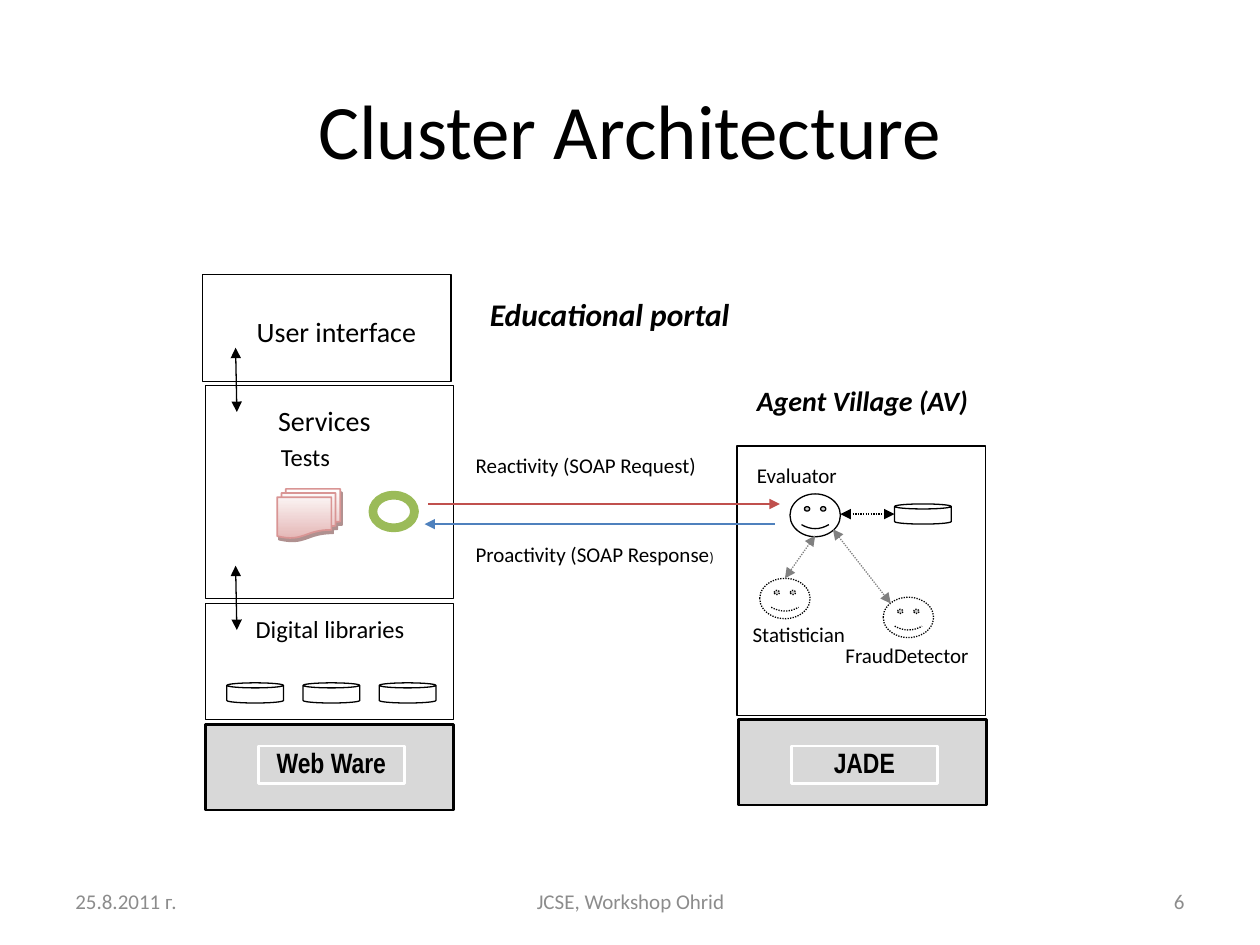
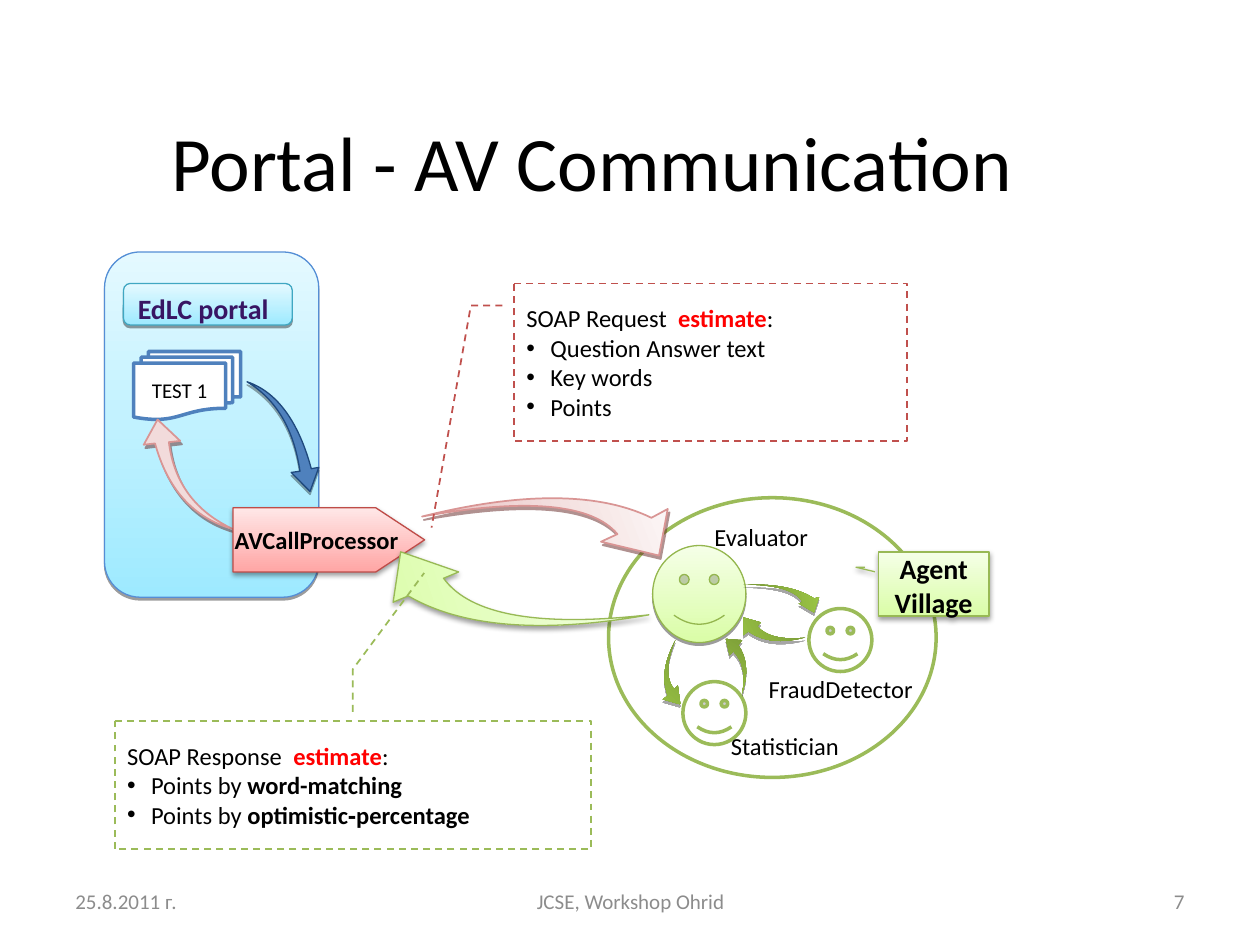
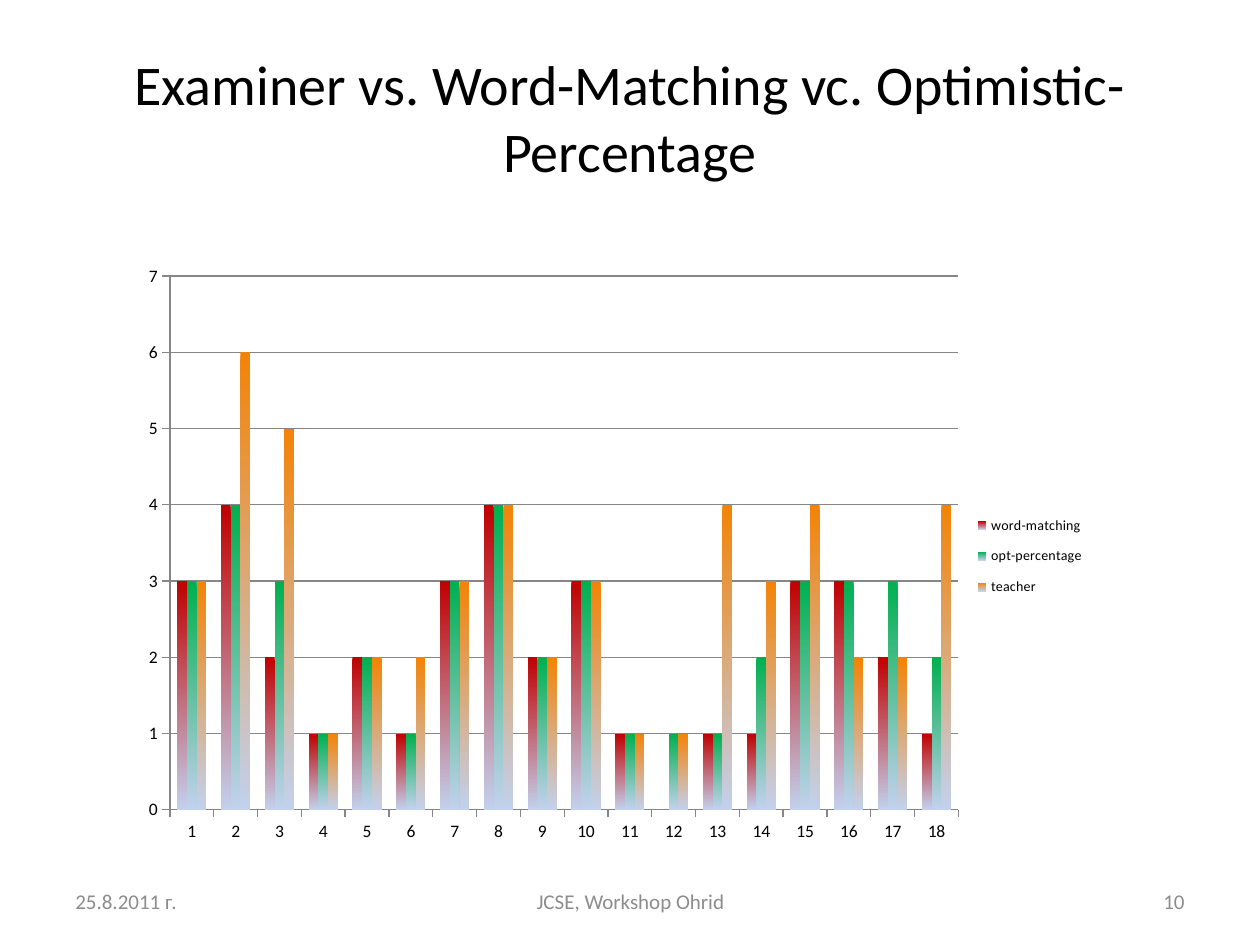
from math import cos, radians, sin

from lxml.etree import SubElement
from pptx import Presentation
from pptx.chart.data import CategoryChartData
from pptx.dml.color import RGBColor
from pptx.enum.chart import XL_CHART_TYPE, XL_LEGEND_POSITION, XL_TICK_MARK
from pptx.enum.dml import MSO_LINE
from pptx.enum.shapes import MSO_CONNECTOR, MSO_SHAPE as SHAPE
from pptx.enum.text import MSO_ANCHOR as ANCHOR, PP_ALIGN as ALIGN
from pptx.oxml.ns import qn
from pptx.util import Cm, Pt

FONT = "Calibri"
BLACK, WHITE, GRAY, MUTED = "000000", "FFFFFF", "D8D8D8", "8C8C8C"
RED, GREEN, BLUE, ROSE = "C0504D", "9BBB59", "4F81BD", "D99594"
DOT, DASH = MSO_LINE.ROUND_DOT, MSO_LINE.DASH
# Gradients: first colour, last colour, direction
SKY = ("9EEAFF", "E4F9FF", 90)
LIME = ("DAFDA7", "F5FFE7", 90)
LEAF = ("769535", "9CC746", 90)
BLUSH = (WHITE, "E5B8B7", 270)
# Shadows: colour, opacity %, blur pt, distance pt, direction
SOFT = (BLACK, 38, 0, 1.6, 90)
BLURRED = (BLACK, 38, 3.1, 1.6, 90)
DEEP = (BLACK, 35, 0, 1.8, 90)
WINE = ("622423", 50, 0, 2.2, 63)


def u(n):
    """Layout unit: a tenth of the slide width."""
    return Cm(n * 2.54)


def rgb(color):
    return RGBColor.from_string(color)


def paint(fill, color):
    if color is None:
        fill.background()
    elif isinstance(color, tuple):
        fill.gradient()
        fill.gradient_angle = color[2]
        for stop, c in zip(fill.gradient_stops, color):
            stop.color.rgb = rgb(c)
    else:
        fill.solid()
        fill.fore_color.rgb = rgb(color)


def stroke(line, color, width=0.75, dash=None):
    if color is None:
        line.fill.background()
        return
    line.color.rgb = rgb(color)
    line.width = Pt(width)
    if dash:
        line.dash_style = dash


def finish(sp, fill, line, width, dash, shadow):
    paint(sp.fill, fill)
    stroke(sp.line, line, width, dash)
    sp.shadow.inherit = False
    if shadow:
        color, alpha, blur, dist, angle = shadow
        effects = sp.element.spPr.find(qn("a:effectLst"))
        outer = SubElement(effects, qn("a:outerShdw"), blurRad=str(Pt(blur)),
                           dist=str(Pt(dist)), dir=str(angle * 60000),
                           rotWithShape="0")
        clr = SubElement(outer, qn("a:srgbClr"), val=color)
        SubElement(clr, qn("a:alpha"), val=str(alpha * 1000))


def style(r, size, color=BLACK, bold=False, italic=False, font=FONT):
    r.font.name, r.font.size = font, Pt(size)
    r.font.bold, r.font.italic = bold, italic
    r.font.color.rgb = rgb(color)


def write(sp, text, size, align=ALIGN.CENTER, anchor=ANCHOR.TOP, pad=(0, 0),
          before=0, after=0, **look):
    tf = sp.text_frame
    tf.word_wrap = True
    tf.vertical_anchor = anchor
    tf.margin_left = tf.margin_right = u(pad[0])
    tf.margin_top = tf.margin_bottom = u(pad[1])
    tf.text = text
    p = tf.paragraphs[0]
    p.alignment = align
    p.space_before, p.space_after = Pt(before), Pt(after)
    for r in p.runs:
        style(r, size, **look)
    return p


def turn(x, y, degrees):
    a = radians(degrees)
    return x * cos(a) - y * sin(a), x * sin(a) + y * cos(a)


def curve(segments):
    """Join three straight segments into one Bezier segment."""
    cubic = segments[0].makeelement(qn("a:cubicBezTo"))
    segments[0].addprevious(cubic)
    for segment in segments:
        cubic.append(segment[0])
        segment.getparent().remove(segment)


def set_layout(layout, **places):
    manual = SubElement(layout, qn("c:manualLayout"))
    for tag, value in places.items():
        SubElement(manual, qn("c:" + tag), val=str(value))


class Region:
    """Part of a slide; everything in it is placed from its top left corner."""

    def __init__(self, s, x, y):
        self.shapes, self.x, self.y = s.shapes, x, y

    def at(self, x, y):
        return u(self.x + x), u(self.y + y)

    def shape(self, kind, x, y, w, h, fill=WHITE, line=BLACK, width=0.75,
              dash=None, shadow=None, adj=()):
        sp = self.shapes.add_shape(kind, *self.at(x, y), u(w), u(h))
        for i, value in enumerate(adj):
            sp.adjustments[i] = value
        finish(sp, fill, line, width, dash, shadow)
        return sp

    def label(self, x, y, w, h, text, size, **kw):
        return write(self.shape(SHAPE.RECTANGLE, x, y, w, h, line=WHITE), text, size, **kw)

    def text(self, x, y, w, h, text, size, **kw):
        return write(self.shapes.add_textbox(*self.at(x, y), u(w), u(h)), text, size, **kw)

    def arrow(self, x1, y1, x2, y2, color=BLACK, width=0.75, dash=None, both=True):
        c = self.shapes.add_connector(MSO_CONNECTOR.STRAIGHT,
                                      *self.at(x1, y1), *self.at(x2, y2))
        stroke(c.line, color, width, dash)
        ln = c.element.spPr.find(qn("a:ln"))
        if both:
            SubElement(ln, qn("a:headEnd"), type="triangle")
        SubElement(ln, qn("a:tailEnd"), type="triangle")
        SubElement(c.element.spPr, qn("a:effectLst"))

    def swoosh(self, angle, points, fill, line, width=0.75, shadow=None):
        """Curved arrow: outer curve (4 points), head (3), inner curve (3).

        The outline is drawn upright, then rotated about its centre."""
        upright = [turn(*self.at(*p), -angle) for p in points]
        builder = self.shapes.build_freeform(*upright[0], scale=1.0)
        builder.add_line_segments(upright[1:] + upright[:1], close=True)
        sp = builder.convert_to_shape()
        segments = list(sp.element.iter(qn("a:lnTo")))
        curve(segments[:3])
        curve(segments[-3:])
        cx, cy = turn(sp.left + sp.width / 2, sp.top + sp.height / 2, angle)
        sp.left, sp.top = int(cx - sp.width / 2), int(cy - sp.height / 2)
        sp.rotation = angle
        finish(sp, fill, line, width, None, shadow)

    def callout(self, x, y, w, h, color, adj, heading, bullets):
        sp = self.shape(SHAPE.LINE_CALLOUT_2, x, y, w, h, line=color, width=1,
                        dash=DASH, adj=adj)
        p = write(sp, heading, 14, align=ALIGN.LEFT, anchor=ANCHOR.MIDDLE, pad=(0.1, 0.05))
        for text, color, bold in (("estimate", "FF0000", True), (":", BLACK, False)):
            r = p.add_run()
            r.text = text
            style(r, 14, color, bold)
        for plain, strong in bullets:
            p = sp.text_frame.add_paragraph()
            p.alignment = ALIGN.LEFT
            pPr = p._p.get_or_add_pPr()
            pPr.set("marL", str(u(0.19)))
            pPr.set("indent", str(-u(0.19)))
            SubElement(pPr, qn("a:buFont"), typeface="Arial")
            SubElement(pPr, qn("a:buChar"), char="•")
            p.text = plain
            if strong:
                p.add_run().text = strong
            for i, r in enumerate(p.runs):
                style(r, 14, bold=i == 1)


# Shared by all slides
def new_slide(prs, title, number, x=0.5, y=0.44, h=1.17, size=44):
    s = prs.slides.add_slide(prs.slide_layouts[6])
    page = Region(s, 0, 0)
    page.text(x, y, 9, h, title, size, anchor=ANCHOR.MIDDLE, pad=(0.1, 0.05))
    for left, w, text, align in ((0.5, 2.33, "25.8.2011 г.", ALIGN.LEFT),
                                 (7.17, 2.33, number, ALIGN.RIGHT),
                                 (3.42, 3.17, "JCSE, Workshop Ohrid", ALIGN.CENTER)):
        page.text(left, 6.95, w, 0.4, text, 12, align=align, color=MUTED,
                  anchor=ANCHOR.MIDDLE, pad=(0.1, 0.05))
    return s


# Cluster architecture
def platform(region, x, y, name, drop):
    region.shape(SHAPE.RECTANGLE, x, y, 1.97, 0.68, fill=GRAY, width=1.5)
    plate = region.shape(SHAPE.RECTANGLE, x + 0.42, y + drop, 1.16, 0.3,
                         fill=None, line=WHITE, width=1.5)
    write(plate, name, 16, after=10, bold=True, font="Arial Narrow")


def portal_column(s, x, y):
    col = Region(s, x, y)
    # Layers
    for left, top, h in ((0.02, 2.61, 0.92), (0.02, 0.88, 1.69), (0, 0, 0.85)):
        col.shape(SHAPE.RECTANGLE, left, top, 1.97, h)
    platform(col, 0.02, 3.57, "Web Ware", 0.17)
    # Digital libraries
    for i in range(3):
        col.shape(SHAPE.CAN, 0.19 + i * 0.605, 3.24, 0.45, 0.16)
    col.label(0.32, 2.64, 1.52, 0.35, "Digital libraries", 14, align=ALIGN.LEFT,
              pad=(0.1, 0.05))
    # Services
    col.shape(SHAPE.FLOWCHART_MULTIDOCUMENT, 0.59, 1.7, 0.5, 0.39,
              fill=BLUSH, line=ROSE, width=1, shadow=WINE)
    col.shape(SHAPE.OVAL, 1.35, 1.75, 0.33, 0.26, line=GREEN, width=5)
    col.label(0.5, 1.02, 0.93, 0.31, "Services", 16, after=10)
    col.label(0.33, 1.33, 0.97, 0.28, "Tests", 14, after=10)
    col.label(0.4, 0.32, 1.32, 0.24, "User interface", 16, after=10)
    # Links between layers
    for top in (0.58, 2.31):
        col.arrow(0.26, top, 0.27, top + 0.51)


def agent_column(s, x, y):
    col = Region(s, x, y)
    col.shape(SHAPE.RECTANGLE, 0, 0, 1.97, 2.14)
    platform(col, 0.01, 2.17, "JADE", 0.21)
    # Agents
    col.shape(SHAPE.CAN, 1.25, 0.46, 0.45, 0.16)
    for left, top, h, dash in ((0.42, 0.38, 0.34, None), (1.16, 1.2, 0.32, DOT),
                               (0.18, 1.05, 0.32, DOT)):
        col.shape(SHAPE.SMILEY_FACE, left, top, 0.4, h, dash=dash)
    col.arrow(0.82, 0.54, 1.25, 0.54, dash=DOT)
    col.arrow(0.62, 0.71, 0.38, 1.05, "808080", dash=DOT)
    col.arrow(0.76, 0.66, 1.22, 1.25, "808080", dash=DOT)
    # Names
    col.label(0.86, 1.56, 1.08, 0.17, "FraudDetector", 12, align=ALIGN.LEFT)
    col.label(0.03, 1.39, 0.92, 0.17, "Statistician", 12)
    col.label(0.06, 0.08, 0.97, 0.28, "Evaluator", 12, align=ALIGN.LEFT, pad=(0.1, 0.05))
    col.label(-0.06, -0.5, 2.11, 0.41, "Agent Village (AV)", 16, after=10,
              bold=True, italic=True)


def messages(s, x, y):
    mid = Region(s, x, y)
    mid.label(0, 0, 2.36, 0.58, "Educational portal", 18, bold=True, italic=True,
              pad=(0.1, 0.05), after=10)
    mid.label(0, 1.3, 1.98, 0.33, "Reactivity (SOAP Request)", 12)
    p = mid.label(0.01, 2.01, 2.1, 0.19, "Proactivity (SOAP Response", 12)
    r = p.add_run()
    r.text = ")"
    style(r, 8)
    mid.arrow(2.49, 1.87, -0.29, 1.87, BLUE, 1, both=False)
    mid.arrow(-0.26, 1.71, 2.53, 1.71, RED, 1, both=False)


# Portal and village communication
def portal_panel(s, x, y):
    box = Region(s, x, y)
    box.shape(SHAPE.ROUNDED_RECTANGLE, 0, 0, 1.7, 2.74, SKY, "558ED5", shadow=SOFT)
    name = box.shape(SHAPE.ROUNDED_RECTANGLE, 0.15, 0.25, 1.34, 0.33, SKY, "40A7C2",
                     shadow=SOFT)
    write(name, "EdLC portal", 16, align=ALIGN.JUSTIFY, pad=(0.1, 0.05), before=5,
          after=10, bold=True, color="381563")
    test = box.shape(SHAPE.FLOWCHART_MULTIDOCUMENT, 0.23, 0.79, 0.85, 0.54,
                     line=BLUE, width=2)
    write(test, "TEST 1", 12, anchor=ANCHOR.MIDDLE, pad=(0.1, 0.05), before=5, after=10)
    # Test to processor and back
    box.swoosh(86.9, [(1.13, 1.03), (1.37, 1.11), (1.54, 1.35), (1.64, 1.72),
                      (1.7, 1.71), (1.63, 1.9), (1.48, 1.75),
                      (1.55, 1.74), (1.5, 1.4), (1.36, 1.17)],
               BLUE, "1F497D", shadow=DEEP)
    box.swoosh(90, [(1.02, 2.2), (0.7, 2.11), (0.5, 1.88), (0.4, 1.52),
                    (0.31, 1.53), (0.42, 1.33), (0.6, 1.5),
                    (0.51, 1.51), (0.55, 1.83), (0.72, 2.06)],
               "F2DBDB", ROSE, 1, WINE)
    processor = box.shape(SHAPE.PENTAGON, 1.02, 2.03, 1.52, 0.51,
                          ("FFA6A5", "FFE7E7", 90), "BF4C48", shadow=BLURRED, adj=[0.76])
    write(processor, "AVCallProcessor", 14, anchor=ANCHOR.MIDDLE, after=10, bold=True)


def exchange(s, x, y):
    area = Region(s, x, y)
    area.swoosh(69, [(0.25, 0.2), (1.05, 0), (1.66, 0.01), (2.07, 0.21),
                     (2.2, 0.14), (2.13, 0.51), (1.67, 0.4),
                     (1.8, 0.34), (1.6, 0.1), (1.08, 0.05)], BLUSH, ROSE, 1, WINE)
    area.swoosh(71.5, [(2.05, 0.98), (1.21, 1.13), (0.57, 1.08), (0.14, 0.83),
                       (0.02, 0.88), (0.08, 0.48), (0.54, 0.64),
                       (0.42, 0.69), (0.63, 0.98), (1.17, 1.08)],
                LIME, "98B955", shadow=BLURRED)


def village(s, x, y):
    area = Region(s, x, y)
    area.shape(SHAPE.OVAL, 0, 0, 2.6, 2.22, line=GREEN, width=2)
    # Agents
    area.shape(SHAPE.SMILEY_FACE, 0.35, 0.38, 0.74, 0.77, LIME, "94B64E", shadow=SOFT)
    for left, top in ((0.59, 1.46), (1.59, 0.88)):
        area.shape(SHAPE.SMILEY_FACE, left, top, 0.5, 0.5, line=GREEN, width=2)
    sign = area.shape(SHAPE.LINE_CALLOUT_2, 2.14, 0.43, 0.88, 0.51, LIME, "98B955",
                      shadow=BLURRED, adj=[0.24, -0.12, 0.24, -0.2, 0.31, -0.03])
    write(sign, "Agent Village", 16, after=10, bold=True)
    # Talk between agents
    for angle, points in (
        (213.3, [(1.06, 1.55), (1.11, 1.4), (1.1, 1.27), (1.03, 1.17), (1.06, 1.13),
                 (0.93, 1.12), (0.96, 1.25), (0.99, 1.22), (1.06, 1.29), (1.09, 1.4)]),
        (222.3, [(0.53, 1.13), (0.44, 1.3), (0.42, 1.44), (0.47, 1.57), (0.43, 1.6),
                 (0.57, 1.64), (0.55, 1.49), (0.52, 1.52), (0.45, 1.43), (0.46, 1.3)]),
        (243.5, [(1.56, 1.11), (1.37, 1.16), (1.22, 1.14), (1.11, 1.06), (1.07, 1.09),
                 (1.07, 0.95), (1.21, 0.99), (1.18, 1.02), (1.25, 1.1), (1.38, 1.13)]),
        (80, [(1.07, 0.69), (1.33, 0.68), (1.51, 0.72), (1.63, 0.8), (1.67, 0.79),
              (1.63, 0.91), (1.51, 0.84), (1.54, 0.83), (1.49, 0.74), (1.34, 0.69)]),
    ):
        area.swoosh(angle, points, LEAF, None, shadow=DEEP)
    # Names
    for left, top, w, name, before in ((0.97, 1.85, 1.09, "Statistician", 5),
                                       (1.27, 1.4, 1.2, "FraudDetector", 5),
                                       (0.84, 0.19, 0.91, "Evaluator", 0)):
        area.text(left, top, w, 0.29, name, 14, align=ALIGN.LEFT, before=before, after=10)


def soap_notes(s, x, y):
    area = Region(s, x, y)
    area.callout(0, 3.47, 3.78, 1.02, GREEN, [-0.07, 0.5, -0.4, 0.5, -1.15, 0.65],
                 "SOAP Response  ", [("Points by ", "word-matching"),
                                     ("Points by ", "optimistic‑percentage")])
    area.callout(3.17, 0, 3.12, 1.25, RED, [0.14, -0.03, 0.14, -0.11, 1.55, -0.21],
                 "SOAP Request  ", [("Question Answer text", ""), ("Key words", ""),
                                    ("Points", "")])


# Score comparison
def score_chart(s, x, y, w, h):
    data = CategoryChartData()
    data.categories = [str(n) for n in range(1, 19)]
    series = (
        ("word-matching", "C00000", (3, 4, 2, 1, 2, 1, 3, 4, 2, 3, 1, 0, 1, 1, 3, 3, 2, 1)),
        ("opt-percentage", "00B050", (3, 4, 3, 1, 2, 1, 3, 4, 2, 3, 1, 1, 1, 2, 3, 3, 3, 2)),
        ("teacher", "F38307", (3, 6, 5, 1, 2, 2, 3, 4, 2, 3, 1, 1, 4, 3, 4, 2, 2, 4)))
    for name, _, values in series:
        data.add_series(name, values)
    chart = s.shapes.add_chart(XL_CHART_TYPE.COLUMN_CLUSTERED, u(x), u(y), u(w), u(h),
                               data).chart
    chart.has_title = False
    chart.font.name, chart.font.size = FONT, Pt(10)
    chart.font.color.rgb = rgb(BLACK)
    plot = chart.plots[0]
    plot.vary_by_categories = False
    plot.gap_width, plot.overlap = 150, 0
    for ser, (_, color, _) in zip(plot.series, series):
        paint(ser.format.fill, (color, "C2D1ED", 270))
    # Axes and legend
    for axis in (chart.category_axis, chart.value_axis):
        axis.major_tick_mark = XL_TICK_MARK.OUTSIDE
        stroke(axis.format.line, "868686")
    values = chart.value_axis
    values.minimum_scale, values.maximum_scale, values.major_unit = 0, 7, 1
    stroke(values.major_gridlines.format.line, "868686")
    chart.has_legend = True
    legend = chart.legend
    legend.position = XL_LEGEND_POSITION.RIGHT
    legend.include_in_layout = False
    legend.font.size = Pt(8)
    # Fixed places of plot and legend
    area = chart.element.find(".//" + qn("c:plotArea"))
    layout = area.find(qn("c:layout"))
    if layout is None:
        layout = SubElement(area, qn("c:layout"))
        area.insert(0, layout)
    set_layout(layout, layoutTarget="inner", xMode="edge", yMode="edge",
               x=0.035, y=0.024, w=0.816, h=0.907)
    box = chart.element.find(".//" + qn("c:legend"))
    layout = box.find(qn("c:layout"))
    if layout is None:
        layout = SubElement(box, qn("c:layout"))
        box.find(qn("c:legendPos")).addnext(layout)
    set_layout(layout, xMode="edge", yMode="edge", x=0.86, y=0.41, w=0.13, h=0.18)


def main():
    prs = Presentation()
    prs.slide_width, prs.slide_height = u(10), u(7.5)

    s = new_slide(prs, "Cluster Architecture", "6")
    portal_column(s, 1.61, 2.18)
    agent_column(s, 5.85, 3.54)
    messages(s, 3.66, 2.29)

    s = new_slide(prs, "Portal - AV Communication", "7", x=0.2, y=0.69)
    portal_panel(s, 0.83, 2)
    village(s, 4.83, 3.95)
    exchange(s, 3.1, 3.9)
    soap_notes(s, 0.91, 2.25)

    s = new_slide(prs, "Examiner vs. Word-Matching vc. Optimistic-Percentage", "10",
                  y=0.3, h=1.25, size=32)
    score_chart(s, 1.08, 2.08, 7.67, 4.67)

    prs.save("out.pptx")


if __name__ == "__main__":
    main()
